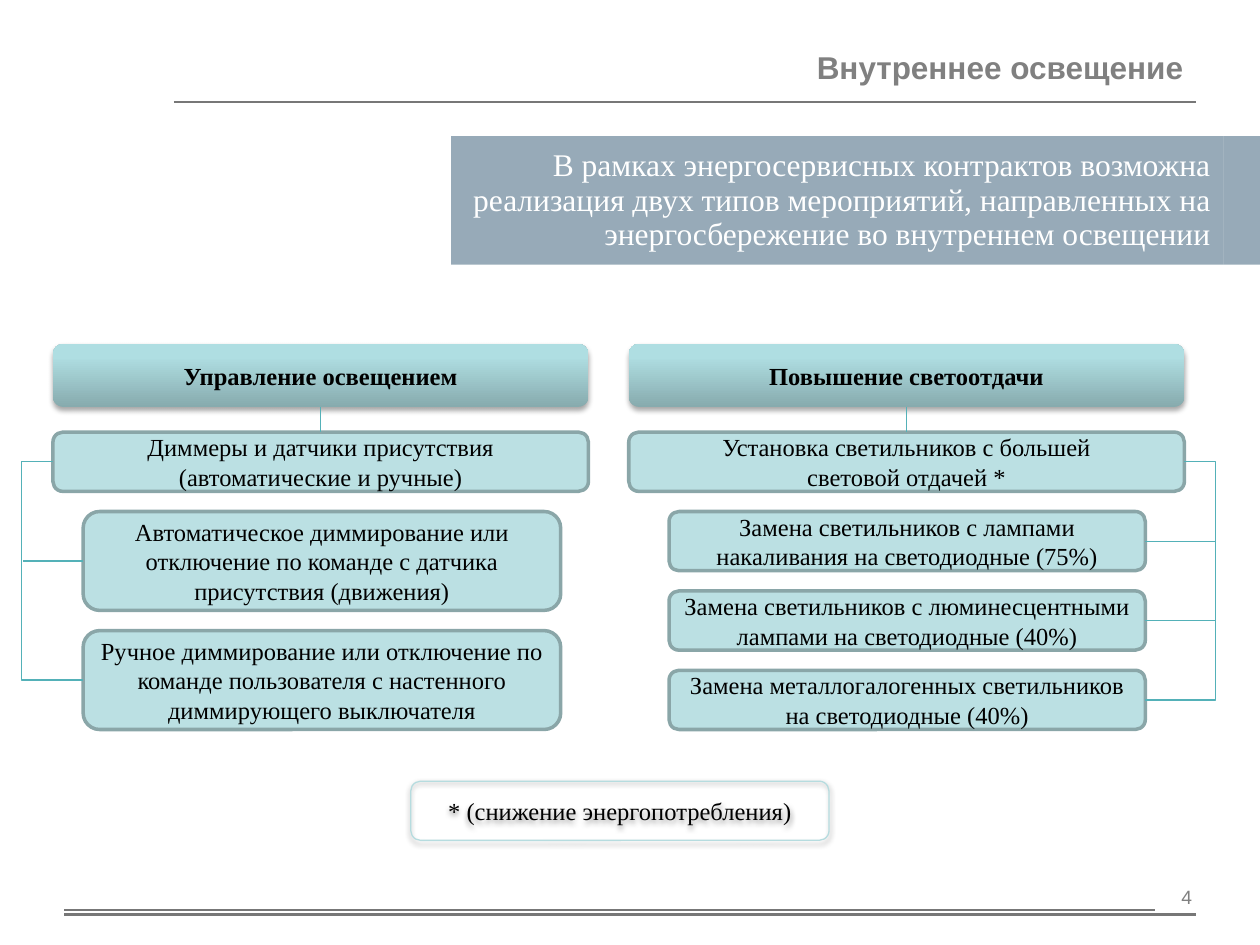
"""Build the indoor lighting slide: two groups of energy-saving measures."""
from dataclasses import dataclass

from lxml import etree
from pptx import Presentation
from pptx.dml.color import RGBColor
from pptx.enum.shapes import MSO_CONNECTOR, MSO_SHAPE
from pptx.enum.text import MSO_ANCHOR, MSO_AUTO_SIZE, PP_ALIGN
from pptx.oxml import parse_xml
from pptx.oxml.ns import nsdecls, qn
from pptx.util import Inches, Pt

STRAIGHT, ELBOW = MSO_CONNECTOR.STRAIGHT, MSO_CONNECTOR.ELBOW
ROUNDED = MSO_SHAPE.ROUNDED_RECTANGLE
MIDDLE = MSO_ANCHOR.MIDDLE
CENTER, RIGHT = PP_ALIGN.CENTER, PP_ALIGN.RIGHT

BLACK = RGBColor(0x00, 0x00, 0x00)
WHITE = RGBColor(0xFF, 0xFF, 0xFF)
GREY = RGBColor(0x80, 0x80, 0x80)
RULE = RGBColor(0x77, 0x77, 0x77)
SLATE = RGBColor(0x3B, 0x60, 0x79)
AQUA = RGBColor(0xBB, 0xE0, 0xE3)
EDGE = RGBColor(0x8A, 0xA6, 0xA8)
TEAL = RGBColor(0x54, 0xB1, 0xB8)
PALE = RGBColor(0xB6, 0xDC, 0xDF)
HEAD_STOPS = ((0, "87ABAE"), (80, "AFDEE2"), (100, "AFE0E4"))
NO_STYLE = "{2D5ABB26-0587-4C30-8999-92F81FD0307C}"

WIDTH, HEIGHT = 10, 7.5
GRID_TOP, PITCH, GAP = 3.43, 0.63, 0.16
HEAD_TOP, HEAD_HEIGHT = 2.73, 0.5

BODY = dict(name="Times New Roman", size=Pt(14), bold=False)
HEAD = dict(BODY, bold=True)
LEAD = dict(BODY, size=Pt(18))
TITLE = dict(name="Arial", size=Pt(18), bold=True)
NUMBER = dict(name="Arial", size=Pt(11), bold=False)


@dataclass
class Column:
    """Left edge and width of a column of boxes."""
    left: float
    width: float


@dataclass
class Item:
    """Text of a box with its row and row span."""
    text: str
    row: float
    span: float = 1


@dataclass
class Group:
    """A headed group whose bracket runs along one side."""
    head: str
    main: str
    items: list[Item]
    outer: Column
    inner: Column
    side: int
    bracket: float
    tick: float


GROUPS = [
    Group("Управление освещением",
          "Диммеры и датчики присутствия\n(автоматические и ручные)",
          [Item("Автоматическое диммирование или отключение по команде с датчика "
                "присутствия (движения)", 1, 1.5),
           Item("Ручное диммирование или отключение по команде пользователя с "
                "настенного диммирующего выключателя", 2.5, 1.5)],
          Column(0.42, 4.25), Column(0.66, 3.79), 1, 0.17, 0.18),
    Group("Повышение светоотдачи",
          "Установка светильников с большей\nсветовой отдачей *",
          [Item("Замена светильников с лампами накаливания на светодиодные (75%)", 1),
           Item("Замена светильников с люминесцентными лампами на светодиодные (40%)", 2),
           Item("Замена металлогалогенных светильников\nна светодиодные (40%)", 3)],
          Column(4.99, 4.41), Column(5.31, 3.78), 3, 9.65, 9.64),
]


def write(tf, text: str, style: dict, color: RGBColor, align) -> None:
    """Fill a text frame with evenly styled paragraphs."""
    tf.text = text
    for p in tf.paragraphs:
        p.alignment = align
        for r in p.runs:
            for key, value in style.items():
                setattr(r.font, key, value)
            r.font.color.rgb = color


def add_text(slide, text: str, at: tuple, style: dict):
    """Add a right-aligned grey text box."""
    s = slide.shapes.add_textbox(*map(Inches, at))
    s.text_frame.word_wrap = True
    write(s.text_frame, text, style, GREY, RIGHT)
    return s


def add_box(slide, text: str, col: Column, top: float, height: float, style: dict):
    """Add a rounded box with centred text."""
    s = slide.shapes.add_shape(ROUNDED, *map(Inches, (col.left, top, col.width, height)))
    s.shadow.inherit = False
    s.text_frame.word_wrap = True
    s.text_frame.vertical_anchor = MIDDLE
    write(s.text_frame, text, style, BLACK, CENTER)
    return s


def add_item(slide, item: Item, col: Column):
    """Add an outlined box on the row grid."""
    s = add_box(slide, item.text, col, GRID_TOP + item.row * PITCH,
                item.span * PITCH - GAP, BODY)
    s.fill.solid()
    s.fill.fore_color.rgb = AQUA
    s.line.color.rgb = EDGE
    s.line.width = Pt(2)
    return s


def add_shadow(s, alpha: int, distance: float) -> None:
    """Cast a soft shadow straight down."""
    s._element.spPr.find(qn("a:effectLst")).append(parse_xml(
        f'<a:outerShdw {nsdecls("a")} blurRad="{Pt(3.1)}" dist="{Pt(distance)}" '
        f'dir="5400000" rotWithShape="0"><a:srgbClr val="000000">'
        f'<a:alpha val="{alpha * 1000}"/></a:srgbClr></a:outerShdw>'))


def add_head(slide, text: str, col: Column):
    """Add a group heading with a vertical gradient."""
    s = add_box(slide, text, col, HEAD_TOP, HEAD_HEIGHT, HEAD)
    s.fill.gradient()
    s.fill.gradient_angle = 90
    stops = s._element.spPr.find(".//" + qn("a:gsLst"))
    for stop in list(stops):
        stops.remove(stop)
    for pos, color in HEAD_STOPS:
        stop = etree.SubElement(stops, qn("a:gs"), pos=str(pos * 1000))
        etree.SubElement(stop, qn("a:srgbClr"), val=color)
    s.line.fill.background()
    add_shadow(s, 35, 1.8)
    return s


def add_line(slide, start: tuple, end: tuple, color=TEAL, width=0.75, kind=STRAIGHT):
    """Add a connector without a shadow."""
    c = slide.shapes.add_connector(kind, *map(Inches, (*start, *end)))
    c.line.color.rgb = color
    c.line.width = Pt(width)
    etree.SubElement(c._element.spPr, qn("a:effectLst"))
    return c


def add_bracket(slide, first, last, side: int, x: float) -> None:
    """Join two boxes by an elbow that bends outside them at x."""
    c = add_line(slide, (0, 0), (1, 1), kind=ELBOW)
    c.begin_connect(first, side)
    c.end_connect(last, side)
    bend = round((Inches(x) - c.begin_x) / (c.end_x - c.begin_x) * 100000)
    geom = c._element.spPr.find(qn("a:prstGeom"))
    etree.SubElement(geom.find(qn("a:avLst")), qn("a:gd"), name="adj1", fmla=f"val {bend}")


def add_group(slide, group: Group) -> None:
    """Draw a heading, its boxes and the lines between them."""
    head = add_head(slide, group.head, group.outer)
    main = add_item(slide, Item(group.main, 0), group.outer)
    stem = add_line(slide, (0, 0), (1, 1))
    stem.begin_connect(head, 2)
    stem.end_connect(main, 0)
    boxes = [add_item(slide, item, group.inner) for item in group.items]
    add_bracket(slide, main, boxes[-1], group.side, group.bracket)
    for s in boxes[:-1]:
        y = (s.top + s.height / 2) / Inches(1)
        tick = add_line(slide, (0, y), (group.tick, y))
        tick.begin_connect(s, group.side)


def add_banner(slide, text: str) -> None:
    """Add the translucent lead table."""
    widths, height = (6.13, 0.29), 1.02
    frame = slide.shapes.add_table(1, 2, *map(
        Inches, (WIDTH - sum(widths), 1.08, sum(widths), height)))
    table = frame.table
    table.first_row = table.horz_banding = False
    table._tbl.tblPr.find(qn("a:tableStyleId")).text = NO_STYLE
    for i, width in enumerate(widths):
        table.columns[i].width = Inches(width)
        cell = table.cell(0, i)
        cell.vertical_anchor = MIDDLE
        cell.margin_top = cell.margin_bottom = Inches(0.06)
        cell.fill.solid()
        cell.fill.fore_color.rgb = SLATE
        color = cell._tc.tcPr.find(".//" + qn("a:srgbClr"))
        etree.SubElement(color, qn("a:alpha"), val="53000")
    write(table.cell(0, 0).text_frame, text, LEAD, WHITE, RIGHT)


def main() -> None:
    """Compose and save the slide."""
    prs = Presentation()
    prs.slide_width, prs.slide_height = Inches(WIDTH), Inches(HEIGHT)
    slide = prs.slides.add_slide(prs.slide_layouts[6])
    for x1, x2, y, width in ((1.38, 9.49, 0.81, 1), (0.51, 9.17, 7.22, 1),
                             (0.51, 9.49, 7.26, 1.5)):
        add_line(slide, (x1, y), (x2, y), RULE, width)
    add_text(slide, "4", (9.17, 6.98, 0.39, 0.52), NUMBER)
    add_banner(slide, "В рамках энергосервисных контрактов возможна реализация двух типов "
                      "мероприятий, направленных на энергосбережение во внутреннем освещении")
    title = add_text(slide, "Внутреннее освещение", (6.29, 0.33, 3.2, 0.4), TITLE)
    title.text_frame.word_wrap = False
    title.text_frame.auto_size = MSO_AUTO_SIZE.SHAPE_TO_FIT_TEXT
    for group in GROUPS:
        add_group(slide, group)
    note = add_box(slide, "* (снижение энергопотребления)", Column(3.26, 3.32),
                   6.2, PITCH - GAP, BODY)
    note.fill.background()
    note.line.color.rgb = PALE
    note.line.width = Pt(0)
    add_shadow(note, 38, 1.6)
    prs.save("out.pptx")


if __name__ == "__main__":
    main()
